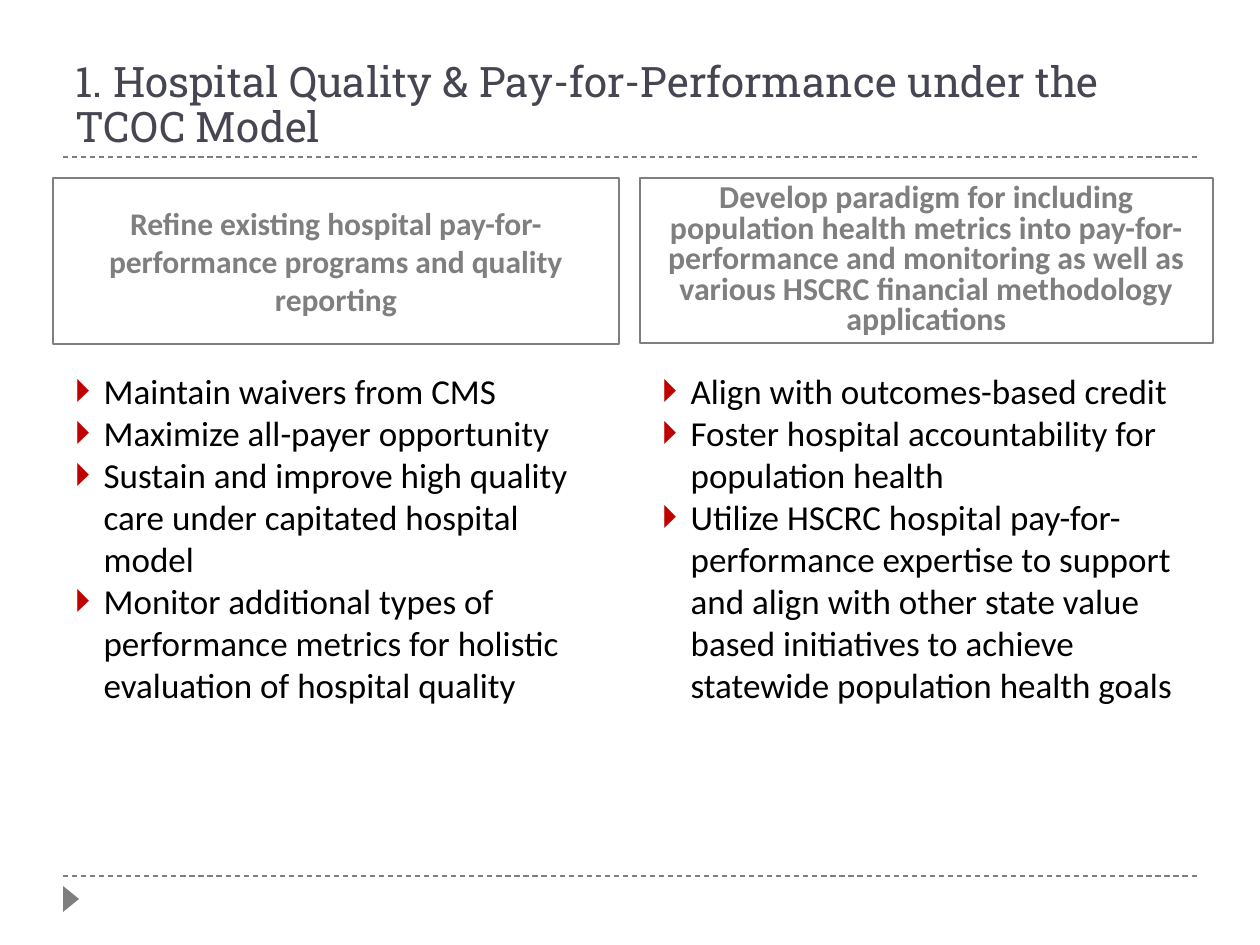
from lxml.etree import SubElement
from pptx import Presentation
from pptx.dml.color import RGBColor
from pptx.enum.dml import MSO_LINE
from pptx.enum.shapes import MSO_CONNECTOR, MSO_SHAPE
from pptx.enum.text import MSO_ANCHOR as Anchor, MSO_AUTO_SIZE, PP_ALIGN as Align
from pptx.oxml.ns import qn
from pptx.util import Emu, Pt

SCALE = 914400 / 126
GRAY, BLACK, RED, SLATE = "7F7F7F", "000000", "C00000", "464653"
COMPARISON_LAYOUT = 4
RULE_LEFT, RULE_RIGHT = 63, 1197
HANGING = 28

TITLE = "1. Hospital Quality & Pay-for-Performance under the TCOC Model"
REFINE = "Refine existing hospital pay-for-performance programs and quality reporting"
DEVELOP = (
    "Develop paradigm for including population health metrics into "
    "pay-for-performance and monitoring as well as various HSCRC financial "
    "methodology applications"
)
REFINE_GOALS = [
    "Maintain waivers from CMS",
    "Maximize all-payer opportunity",
    "Sustain and improve high quality care under capitated hospital model",
    "Monitor additional types of performance metrics for holistic evaluation "
    "of hospital quality",
]
DEVELOP_GOALS = [
    "Align with outcomes-based credit",
    "Foster hospital accountability for population health",
    "Utilize HSCRC hospital pay-for-performance expertise to support and align "
    "with other state value based initiatives to achieve statewide population "
    "health goals",
]


def px(length):
    return Emu(round(length * SCALE))


def rgb(color):
    return RGBColor.from_string(color)


def place(box, left, top, width, height, anchor):
    box.left, box.top, box.width, box.height = map(px, (left, top, width, height))
    frame = box.text_frame
    frame.word_wrap = True
    frame.auto_size = MSO_AUTO_SIZE.NONE
    frame.vertical_anchor = anchor
    return frame


def write(para, text, size, font, color, bold=False, align=Align.LEFT, spacing=1.0):
    para.alignment = align
    para.line_spacing = spacing
    para.space_before = Pt(0)
    span = para.add_run()
    span.text = text
    span.font.size = Pt(size)
    span.font.name = font
    span.font.bold = bold
    span.font.color.rgb = rgb(color)


def add_bullet(para, margin):
    props = para._p.get_or_add_pPr()
    props.set("marL", str(px(margin)))
    props.set("indent", str(-px(HANGING)))
    color = SubElement(props, qn("a:buClr"))
    SubElement(color, qn("a:srgbClr"), val=RED)
    SubElement(props, qn("a:buChar"), char="🞂")


def fill_heading(box, area, text, size, spacing=1.0):
    frame = place(box, *area, Anchor.MIDDLE)
    box.line.color.rgb = rgb(GRAY)
    box.line.width = Pt(0.75)
    write(frame.paragraphs[0], text, size, "Calibri", GRAY, True, Align.CENTER, spacing)


def fill_list(box, area, items, margin, level=0):
    frame = place(box, *area, Anchor.TOP)
    for index, item in enumerate(items):
        para = frame.add_paragraph() if index else frame.paragraphs[0]
        para.level = level
        write(para, item, 20, "Calibri", BLACK)
        add_bullet(para, margin)


def add_rule(page, y):
    rule = page.shapes.add_connector(
        MSO_CONNECTOR.STRAIGHT, px(RULE_LEFT), px(y), px(RULE_RIGHT), px(y)
    )
    rule.line.color.rgb = rgb(GRAY)
    rule.line.width = Pt(0.75)
    rule.line.dash_style = MSO_LINE.DASH
    SubElement(rule._element.spPr, qn("a:effectLst"))


def add_page_marker(page):
    marker = page.shapes.add_shape(
        MSO_SHAPE.ISOSCELES_TRIANGLE, px(58), px(891), px(26), px(16)
    )
    marker.rotation = 90
    marker.shadow.inherit = False
    marker.fill.solid()
    marker.fill.fore_color.rgb = rgb(GRAY)
    marker.line.fill.background()


def main():
    deck = Presentation()
    deck.slide_width, deck.slide_height = px(1260), px(945)
    page = deck.slides.add_slide(deck.slide_layouts[COMPARISON_LAYOUT])
    title, left_head, left_list, right_head, right_list = page.placeholders

    for y in (157, 876):
        add_rule(page, y)
    add_page_marker(page)

    frame = place(title, 63, 32, 1134, 126, Anchor.BOTTOM)
    write(frame.paragraphs[0], TITLE, 24, "Roboto Slab", SLATE, spacing=0.9)

    fill_heading(left_head, (53, 178, 566, 166), REFINE, 18)
    fill_heading(right_head, (640, 178, 573, 165), DEVELOP, 18.2, 0.8)
    fill_list(left_list, (63, 363, 557, 488), REFINE_GOALS, HANGING)
    fill_list(right_list, (640, 363, 573, 488), DEVELOP_GOALS, 38, level=1)

    deck.save("out.pptx")


if __name__ == "__main__":
    main()
